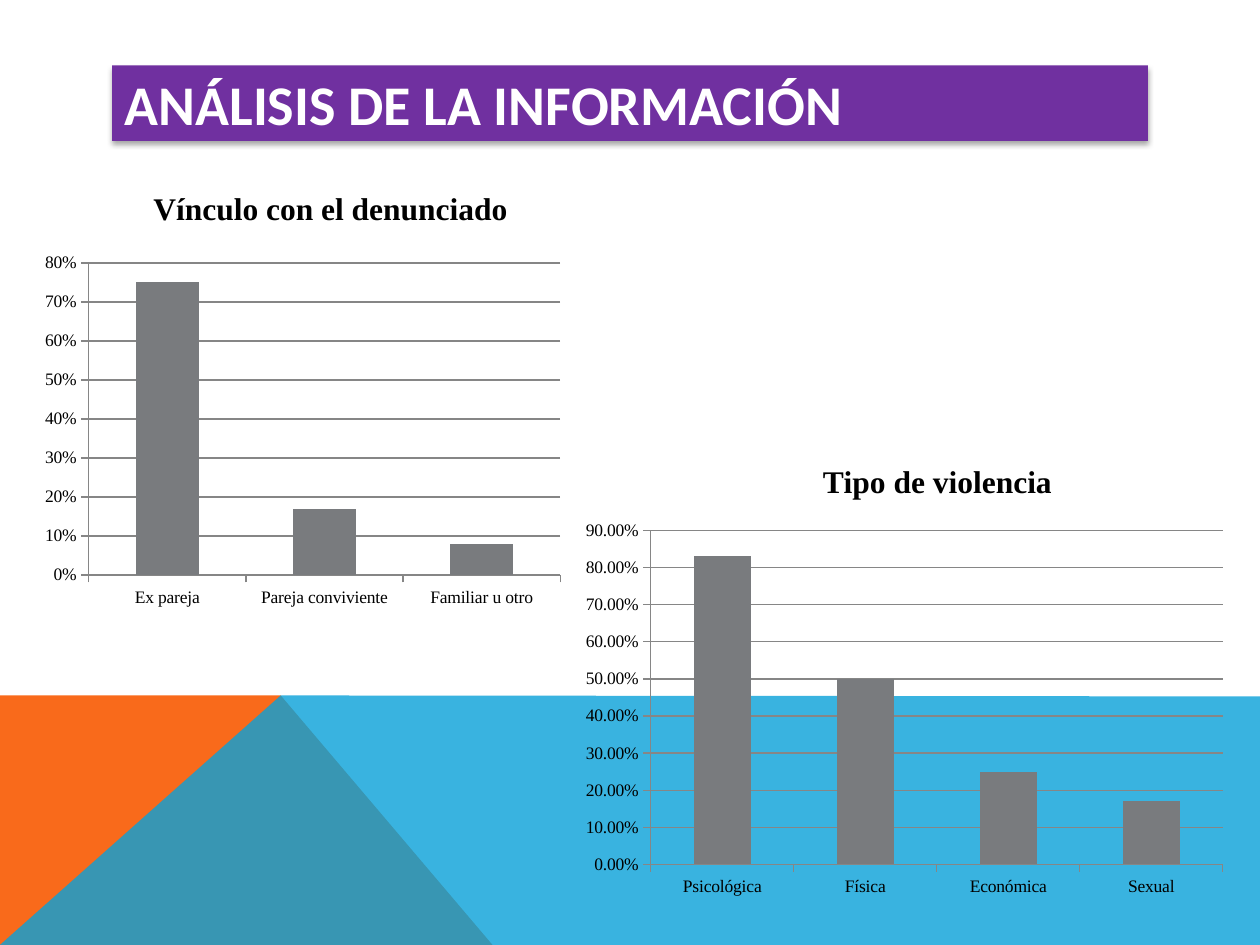
from dataclasses import dataclass

from lxml.etree import SubElement
from pptx import Presentation
from pptx.chart.data import CategoryChartData
from pptx.dml.color import RGBColor
from pptx.enum.chart import XL_CHART_TYPE as ChartType, XL_TICK_MARK as TickMark
from pptx.enum.text import MSO_ANCHOR as Anchor, MSO_AUTO_SIZE as AutoSize, PP_ALIGN as Align
from pptx.oxml import parse_xml
from pptx.oxml.ns import nsdecls, qn
from pptx.util import Cm, Pt

COLORS = {
    "orange": "F96A1B",
    "blue": "08A1D9",
    "purple": "7030A0",
    "bar": "797B7E",
    "grid": "868686",
    "black": "000000",
    "white": "FFFFFF",
}
SERIF = "Times New Roman"


@dataclass
class Band:
    color: str
    points: list[tuple[float, float]]
    opacity: int = 100


@dataclass
class BarChart:
    title: str
    values: dict[str, float]
    box: tuple[float, float, float, float]
    plot_area: tuple[float, float, float, float]
    title_corner: tuple[float, float]
    maximum: float
    number_format: str


BANDS = [
    Band("orange", [(0, 19.05), (0, 14.02), (5.66, 14.02), (9.93, 19.05)]),
    Band("blue", [(0, 19.05), (5.66, 14.02), (25.4, 14.04), (25.4, 19.05)], 80),
]
CHARTS = [
    BarChart("Vínculo con el denunciado",
             {"Ex pareja": 0.75, "Pareja conviviente": 0.17, "Familiar u otro": 0.08},
             (0.71, 3.53, 10.8, 8.86), (0.1, 0.2, 0.88, 0.71), (0.21, 0.02), 0.8, "0%"),
    BarChart("Tipo de violencia",
             {"Psicológica": 0.83, "Física": 0.5, "Económica": 0.25, "Sexual": 0.17},
             (11.51, 8.92, 13.41, 9.35), (0.12, 0.19, 0.86, 0.72), (0.37, 0.03), 0.9, "0.00%"),
]


def rgb(name: str) -> RGBColor:
    return RGBColor.from_string(COLORS[name])


def set_solid(fill, name: str) -> None:
    fill.solid()
    fill.fore_color.rgb = rgb(name)


def set_font(font, size: float, color: str, name: str, bold: bool = False) -> None:
    font.size, font.name, font.bold = Pt(size), name, bold
    font.color.rgb = rgb(color)


def place_manually(element, index: int, values: tuple[float, ...], inner: bool = False) -> None:
    """Give a chart part a layout in fractions of the chart's size."""
    for old in element.findall(qn("c:layout")):
        element.remove(old)
    layout = parse_xml(f"<c:layout {nsdecls('c')}><c:manualLayout/></c:layout>")
    settings = [("layoutTarget", "inner")] if inner else []
    settings += [("xMode", "edge"), ("yMode", "edge")]
    settings += zip("xywh", values)
    for tag, value in settings:
        SubElement(layout[0], qn(f"c:{tag}")).set("val", str(value))
    element.insert(index, layout)


def draw_band(slide, band: Band) -> None:
    points = [(Cm(x), Cm(y)) for x, y in band.points]
    builder = slide.shapes.build_freeform(*points[0])
    builder.add_line_segments(points[1:], close=True)
    shape = builder.convert_to_shape()
    shape.shadow.inherit = False
    shape.line.fill.background()
    set_solid(shape.fill, band.color)
    if band.opacity < 100:
        color = shape.fill._xPr.find(f".//{qn('a:srgbClr')}")
        SubElement(color, qn("a:alpha")).set("val", str(band.opacity * 1000))


def draw_title(slide, text: str) -> None:
    title = slide.shapes.title
    title.left, title.top, title.width, title.height = map(Cm, (2.26, 1.32, 20.88, 1.52))
    set_solid(title.fill, "purple")
    title._element.spPr.append(parse_xml(
        f'<a:effectLst {nsdecls("a")}>'
        f'<a:outerShdw blurRad="{Pt(3.1)}" dist="{Pt(1.8)}" dir="5400000" rotWithShape="0">'
        f'<a:srgbClr val="{COLORS["black"]}"><a:alpha val="35000"/></a:srgbClr>'
        '</a:outerShdw></a:effectLst>'))
    frame = title.text_frame
    frame.text = text
    frame.auto_size = AutoSize.NONE
    frame.vertical_anchor = Anchor.MIDDLE
    paragraph = frame.paragraphs[0]
    paragraph.alignment = Align.LEFT
    set_font(paragraph.font, 32, "white", "Calibri", bold=True)


def draw_chart(slide, bars: BarChart) -> None:
    data = CategoryChartData(number_format=bars.number_format)
    data.categories = list(bars.values)
    data.add_series(bars.title, list(bars.values.values()))
    chart = slide.shapes.add_chart(
        ChartType.COLUMN_CLUSTERED, *map(Cm, bars.box), data).chart
    chart.has_legend = False
    set_font(chart.font, 10, "black", "Karla")

    chart.has_title = True
    chart_title = chart.chart_title
    chart_title.text_frame.text = bars.title
    set_font(chart_title.text_frame.paragraphs[0].font, 18, "black", SERIF, bold=True)
    place_manually(chart_title._element, 1, bars.title_corner)
    place_manually(chart._chartSpace.chart.plotArea, 0, bars.plot_area, inner=True)

    plot = chart.plots[0]
    plot.gap_width = 150
    plot.vary_by_categories = False
    set_solid(plot.series[0].format.fill, "bar")

    value_axis = chart.value_axis
    value_axis.minimum_scale, value_axis.maximum_scale = 0, bars.maximum
    value_axis.major_unit = 0.1
    value_axis.has_major_gridlines = True
    value_axis.tick_labels.number_format = bars.number_format
    value_axis.tick_labels.number_format_is_linked = False
    for axis in (chart.category_axis, value_axis):
        axis.major_tick_mark = TickMark.OUTSIDE
        set_font(axis.tick_labels.font, 10, "black", SERIF)
    for part in (chart.category_axis, value_axis, value_axis.major_gridlines):
        part.format.line.width = Pt(0.75)
        part.format.line.color.rgb = rgb("grid")


def main() -> None:
    presentation = Presentation()
    presentation.slide_width, presentation.slide_height = Cm(25.4), Cm(19.05)
    slide = presentation.slides.add_slide(presentation.slide_layouts[5])
    for band in BANDS:
        draw_band(slide, band)
    draw_title(slide, "ANÁLISIS DE LA INFORMACIÓN")
    for bars in CHARTS:
        draw_chart(slide, bars)
    presentation.save("out.pptx")


if __name__ == "__main__":
    main()
